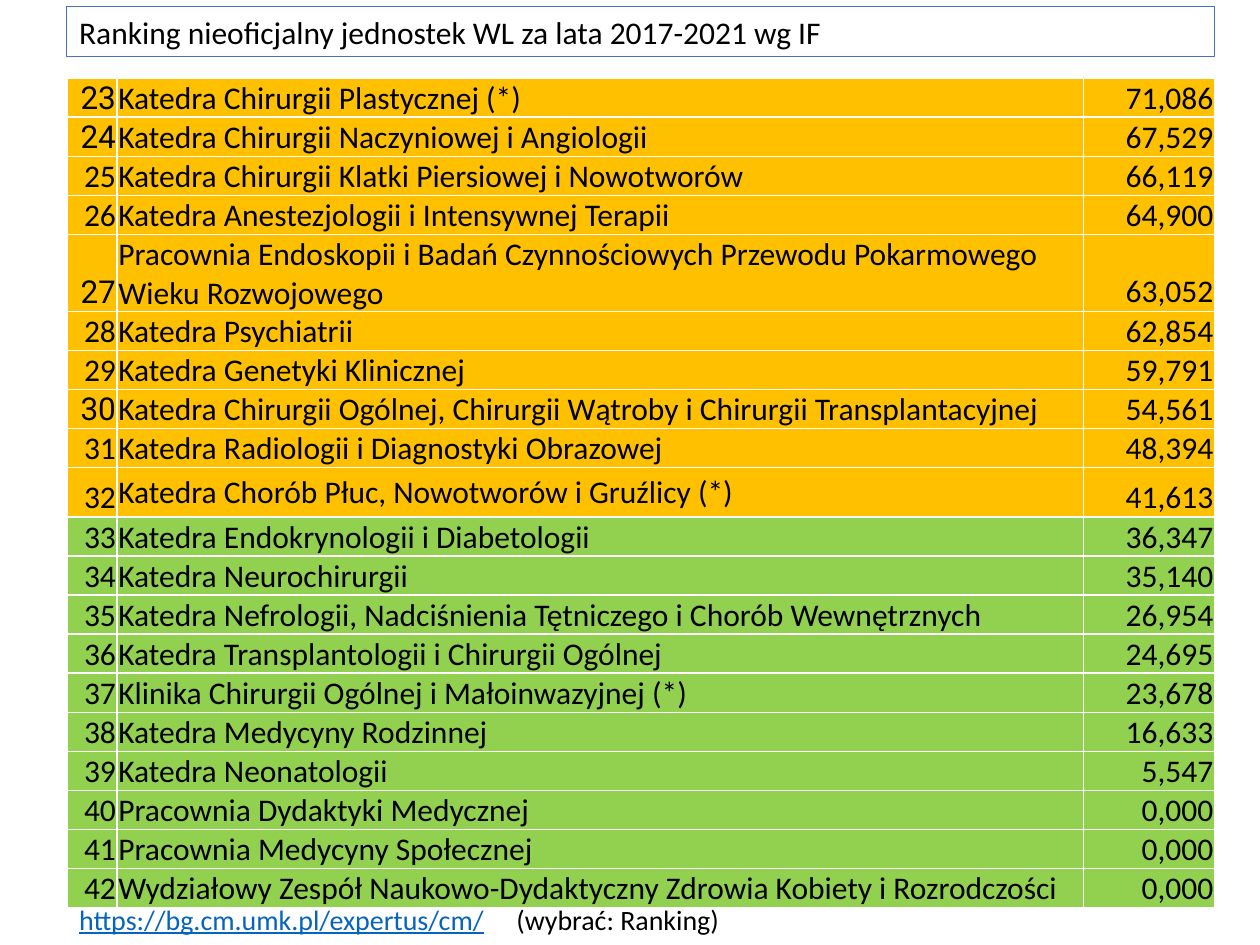
"""Build the unofficial ranking slide of units by impact factor."""
from dataclasses import dataclass
from typing import NamedTuple

from lxml import etree
from pptx import Presentation
from pptx.dml.color import RGBColor
from pptx.enum.shapes import MSO_SHAPE
from pptx.enum.text import MSO_ANCHOR, MSO_AUTO_SIZE, PP_ALIGN
from pptx.oxml.ns import qn
from pptx.util import Inches, Pt

RECT = MSO_SHAPE.RECTANGLE
LOW, MID = MSO_ANCHOR.BOTTOM, MSO_ANCHOR.MIDDLE
LEFT, RIGHT = PP_ALIGN.LEFT, PP_ALIGN.RIGHT
GROW = MSO_AUTO_SIZE.SHAPE_TO_FIT_TEXT
WIDE, HIGH = Inches(10), Inches(7.5)
COL, ROW = WIDE / 100, HIGH / 100


@dataclass(frozen=True)
class Theme:
    """Colours, fonts and type sizes of the slide."""
    ink: str = "000000"
    frame: str = "4472C4"
    rule: str = "FFFFFF"
    link: str = "0563C1"
    amber: str = "FFC000"
    green: str = "92D050"
    face: str = "Calibri"
    alt: str = "Roboto"
    body: int = 18
    note: int = 16


class Box(NamedTuple):
    """Place in grid columns and rows."""
    left: float
    top: float
    wide: float
    high: float

    def emu(self) -> tuple[int, int, int, int]:
        """Return the place in slide units."""
        return (cols(self.left), rows(self.top), cols(self.wide), rows(self.high))


class Unit(NamedTuple):
    """One ranked unit."""
    name: str
    score: str


THEME = Theme()
HEAD = Box(5.3, 0.67, 91.1, 5.33)
GRID = Box(5.3, 8.27, 91.1, 86.93)
FOOT = Box(5.3, 94.8, 82.8, 4.93)
SPANS = (4, 76.7, 10.4)
LINE, TALL = 2.53, 5.2
FIRST, LAST_AMBER, FIRST_LOW = 23, 32, 40
ALT_RANKS = {23, 24, 27, 30}
UNITS = (
    Unit("Katedra Chirurgii Plastycznej (*)", "71,086"),
    Unit("Katedra Chirurgii Naczyniowej i Angiologii", "67,529"),
    Unit("Katedra Chirurgii Klatki Piersiowej i Nowotworów", "66,119"),
    Unit("Katedra Anestezjologii i Intensywnej Terapii", "64,900"),
    Unit("Pracownia Endoskopii i Badań Czynnościowych Przewodu Pokarmowego "
         "Wieku Rozwojowego", "63,052"),
    Unit("Katedra Psychiatrii", "62,854"),
    Unit("Katedra Genetyki Klinicznej", "59,791"),
    Unit("Katedra Chirurgii Ogólnej, Chirurgii Wątroby i Chirurgii "
         "Transplantacyjnej", "54,561"),
    Unit("Katedra Radiologii i Diagnostyki Obrazowej", "48,394"),
    Unit("Katedra Chorób Płuc, Nowotworów i Gruźlicy (*)", "41,613"),
    Unit("Katedra Endokrynologii i Diabetologii", "36,347"),
    Unit("Katedra Neurochirurgii", "35,140"),
    Unit("Katedra Nefrologii, Nadciśnienia Tętniczego i Chorób "
         "Wewnętrznych", "26,954"),
    Unit("Katedra Transplantologii i Chirurgii Ogólnej", "24,695"),
    Unit("Klinika Chirurgii Ogólnej i Małoinwazyjnej (*)", "23,678"),
    Unit("Katedra Medycyny Rodzinnej", "16,633"),
    Unit("Katedra Neonatologii", "5,547"),
    Unit("Pracownia Dydaktyki Medycznej", "0,000"),
    Unit("Pracownia Medycyny Społecznej", "0,000"),
    Unit("Wydziałowy Zespół Naukowo-Dydaktyczny Zdrowia Kobiety i "
         "Rozrodczości", "0,000"),
)


def cols(count: float) -> int:
    """Turn grid columns into slide units."""
    return round(count * COL)


def rows(count: float) -> int:
    """Turn grid rows into slide units."""
    return round(count * ROW)


def style(font, size: int, face: str = THEME.face) -> None:
    """Set size, face and ink of a font."""
    font.size, font.name = Pt(size), face
    font.color.rgb = RGBColor.from_string(THEME.ink)


def edge(cell) -> None:
    """Rule all four sides of a cell."""
    props = cell._tc.get_or_add_tcPr()
    for spot, side in enumerate(("lnL", "lnR", "lnT", "lnB")):
        line = etree.Element(qn(f"a:{side}"), w=str(Pt(1)))
        fill = etree.SubElement(line, qn("a:solidFill"))
        etree.SubElement(fill, qn("a:srgbClr"), val=THEME.rule)
        props.insert(spot, line)


def fill_cell(cell, text: str, align, anchor, face: str, tint: str) -> None:
    """Write and colour one cell."""
    cell.margin_left = cell.margin_right = cell.margin_top = Inches(0.01)
    cell.margin_bottom = 0
    cell.vertical_anchor = anchor
    cell.fill.solid()
    cell.fill.fore_color.rgb = RGBColor.from_string(tint)
    edge(cell)
    para = cell.text_frame.paragraphs[0]
    para.text, para.alignment = text, align
    style(para.font, THEME.body, face)


def draw_head(slide) -> None:
    """Draw the framed title."""
    shape = slide.shapes.add_shape(RECT, *HEAD.emu())
    shape.shadow.inherit = False
    shape.fill.background()
    shape.line.color.rgb = RGBColor.from_string(THEME.frame)
    shape.line.width = Pt(0.75)
    frame = shape.text_frame
    frame.word_wrap, frame.auto_size = True, GROW
    para = frame.paragraphs[0]
    para.text = "Ranking nieoficjalny jednostek WL za lata 2017-2021 wg IF"
    para.alignment = LEFT
    style(para.font, THEME.body)


def draw_table(slide) -> None:
    """Draw the ranking table."""
    frame = slide.shapes.add_table(len(UNITS), len(SPANS), *GRID.emu())
    table = frame.table
    table.first_row = table.horz_banding = False
    for col, span in zip(table.columns, SPANS):
        col.width = cols(span)
    for rank, (row, unit) in enumerate(zip(table.rows, UNITS), FIRST):
        row.height = rows(TALL if rank == LAST_AMBER else LINE)
        tint = THEME.amber if rank <= LAST_AMBER else THEME.green
        face = THEME.alt if rank in ALT_RANKS else THEME.face
        anchor = MID if rank < FIRST_LOW else LOW
        num, name, score = row.cells
        fill_cell(num, str(rank), RIGHT, LOW, face, tint)
        fill_cell(name, unit.name, LEFT, anchor, THEME.face, tint)
        fill_cell(score, unit.score, RIGHT, LOW, THEME.face, tint)
    frame.height = rows(GRID.high)


def draw_foot(slide) -> None:
    """Draw the source address and its hint."""
    frame = slide.shapes.add_textbox(*FOOT.emu()).text_frame
    frame.word_wrap, frame.auto_size = True, GROW
    para = frame.paragraphs[0]
    tabs = etree.SubElement(para._p.get_or_add_pPr(), qn("a:tabLst"))
    etree.SubElement(tabs, qn("a:tab"), pos=str(cols(34.7)), algn="l")
    style(para.font, THEME.note)
    link, hint = para.add_run(), para.add_run()
    link.text = "https://bg.cm.umk.pl/expertus/cm/"
    link.font.underline = True
    link.font.color.rgb = RGBColor.from_string(THEME.link)
    hint.text = "\t(wybrać: Ranking)"


def main() -> None:
    """Build and save the deck."""
    deck = Presentation()
    deck.slide_width, deck.slide_height = WIDE, HIGH
    slide = deck.slides.add_slide(deck.slide_layouts[6])
    draw_head(slide)
    draw_table(slide)
    draw_foot(slide)
    deck.save("out.pptx")


if __name__ == "__main__":
    main()
